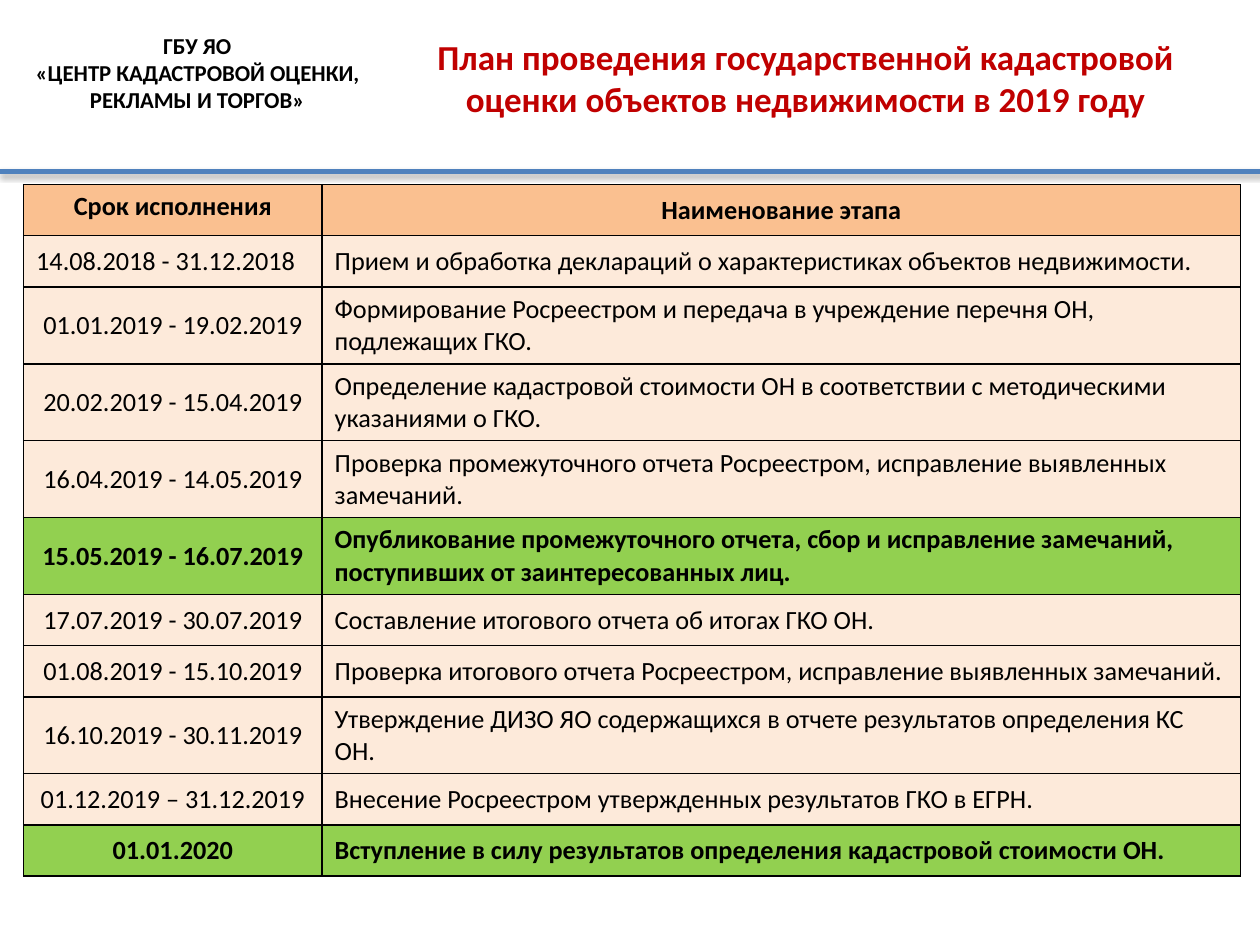
from dataclasses import dataclass

from lxml import etree
from pptx import Presentation
from pptx.dml.color import RGBColor
from pptx.enum import shapes, text
from pptx.oxml import ns
from pptx.util import Pt


@dataclass(frozen=True)
class Theme:
    font: str = "Calibri"
    ink: str = "000000"
    paper: str = "FFFFFF"
    title: str = "C00000"
    rule: str = "4F81BD"
    header: str = "FAC090"
    row: str = "FDEADA"
    milestone: str = "92D050"
    title_size: float = 20
    label_size: float = 13
    table_size: float = 15


CENTER, LEFT = text.PP_ALIGN.CENTER, text.PP_ALIGN.LEFT
TOP, MIDDLE = text.MSO_ANCHOR.TOP, text.MSO_ANCHOR.MIDDLE

STAGES = [
    ("Срок исполнения", "Наименование этапа"),
    ("14.08.2018 - 31.12.2018", "Прием и обработка деклараций о характеристиках объектов недвижимости."),
    ("01.01.2019 - 19.02.2019", "Формирование Росреестром и передача в учреждение перечня ОН, подлежащих ГКО."),
    ("20.02.2019 - 15.04.2019", "Определение кадастровой стоимости ОН в соответствии с методическими указаниями о ГКО."),
    ("16.04.2019 - 14.05.2019", "Проверка промежуточного отчета Росреестром, исправление выявленных замечаний."),
    ("15.05.2019 - 16.07.2019", "Опубликование промежуточного отчета, сбор и исправление замечаний, "
                                "поступивших от заинтересованных лиц."),
    ("17.07.2019 - 30.07.2019", "Составление итогового отчета об итогах ГКО ОН."),
    ("01.08.2019 - 15.10.2019", "Проверка итогового отчета Росреестром, исправление выявленных замечаний."),
    ("16.10.2019 - 30.11.2019", "Утверждение ДИЗО ЯО содержащихся в отчете результатов определения КС ОН."),
    ("01.12.2019 – 31.12.2019", "Внесение Росреестром утвержденных результатов ГКО в ЕГРН."),
    ("01.01.2020", "Вступление в силу результатов определения кадастровой стоимости ОН."),
]
MILESTONES = {5, 10}


class PlanSlide:
    """Draws the elements of the plan on one slide in a shared style."""

    def __init__(self, slide, theme):
        self.slide, self.theme = slide, theme

    def set_text(self, frame, lines, size, color, bold=True, align=CENTER):
        frame.word_wrap = True
        for index, line in enumerate(lines):
            paragraph = frame.add_paragraph() if index else frame.paragraphs[0]
            paragraph.text, paragraph.alignment = line, align
            font = paragraph.font
            font.name, font.size, font.bold = self.theme.font, Pt(size), bold
            font.color.rgb = RGBColor.from_string(color)

    def panel(self, kind, box, lines, size, color, anchor, fill=None, outline=None):
        panel = self.slide.shapes.add_shape(kind, *map(Pt, box))
        panel.shadow.inherit = False
        if fill:
            panel.fill.solid()
            panel.fill.fore_color.rgb = RGBColor.from_string(fill)
        else:
            panel.fill.background()
        if outline:
            panel.line.color.rgb = RGBColor.from_string(outline)
            panel.line.width = Pt(2)
        else:
            panel.line.fill.background()
        panel.text_frame.vertical_anchor = anchor
        self.set_text(panel.text_frame, lines, size, color)

    def rule(self, y, width):
        rule = self.slide.shapes.add_connector(
            shapes.MSO_CONNECTOR.STRAIGHT, Pt(0), Pt(y), Pt(width), Pt(y))
        rule.line.color.rgb = RGBColor.from_string(self.theme.rule)
        rule.line.width = Pt(3)
        effects = etree.SubElement(rule._element.spPr, ns.qn("a:effectLst"))
        shadow = etree.SubElement(effects, ns.qn("a:outerShdw"), blurRad=str(Pt(3.1)),
                                  dist=str(Pt(1.8)), dir="5400000", rotWithShape="0")
        black = etree.SubElement(shadow, ns.qn("a:srgbClr"), val=self.theme.ink)
        etree.SubElement(black, ns.qn("a:alpha"), val="35000")

    def border(self, cell):
        properties = cell._tc.get_or_add_tcPr()
        for index, side in enumerate(("lnL", "lnR", "lnT", "lnB")):
            line = etree.Element(ns.qn(f"a:{side}"), w=str(Pt(1)))
            fill = etree.SubElement(line, ns.qn("a:solidFill"))
            etree.SubElement(fill, ns.qn("a:srgbClr"), val=self.theme.ink)
            properties.insert(index, line)

    def table(self, left, top, widths, row_height, rows, milestones):
        theme = self.theme
        table = self.slide.shapes.add_table(
            len(rows), len(widths), Pt(left), Pt(top),
            Pt(sum(widths)), Pt(row_height * len(rows))).table
        for column, width in zip(table.columns, widths):
            column.width = Pt(width)
        for r, row in enumerate(rows):
            table.rows[r].height = Pt(row_height)
            fill = theme.header if r == 0 else theme.milestone if r in milestones else theme.row
            for c, content in enumerate(row):
                cell = table.cell(r, c)
                cell.fill.solid()
                cell.fill.fore_color.rgb = RGBColor.from_string(fill)
                cell.vertical_anchor = TOP if (r, c) == (0, 0) else MIDDLE
                centered = r == 0 or (c == 0 and r > 1)
                self.set_text(cell.text_frame, [content], theme.table_size, theme.ink,
                              r == 0 or r in milestones, CENTER if centered else LEFT)
                self.border(cell)


def main():
    deck = Presentation()
    deck.slide_width, deck.slide_height = Pt(720), Pt(540)
    theme = Theme()
    plan = PlanSlide(deck.slides.add_slide(deck.slide_layouts[6]), theme)
    plan.panel(shapes.MSO_SHAPE.ROUNDED_RECTANGLE, (211.7, 14.4, 497.5, 59.8),
               ["План проведения государственной кадастровой оценки объектов недвижимости в 2019 году"],
               theme.title_size, theme.title, MIDDLE, outline=theme.paper)
    plan.rule(98, 721.4)
    plan.table(13.5, 105.5, (170.6, 524.9), 29.2, STAGES, MILESTONES)
    plan.panel(shapes.MSO_SHAPE.RECTANGLE, (10.8, 14.4, 203.8, 54.7),
               ["ГБУ ЯО", "«ЦЕНТР КАДАСТРОВОЙ ОЦЕНКИ, РЕКЛАМЫ И ТОРГОВ»"],
               theme.label_size, theme.ink, TOP, fill=theme.paper)
    deck.save("out.pptx")


if __name__ == "__main__":
    main()
